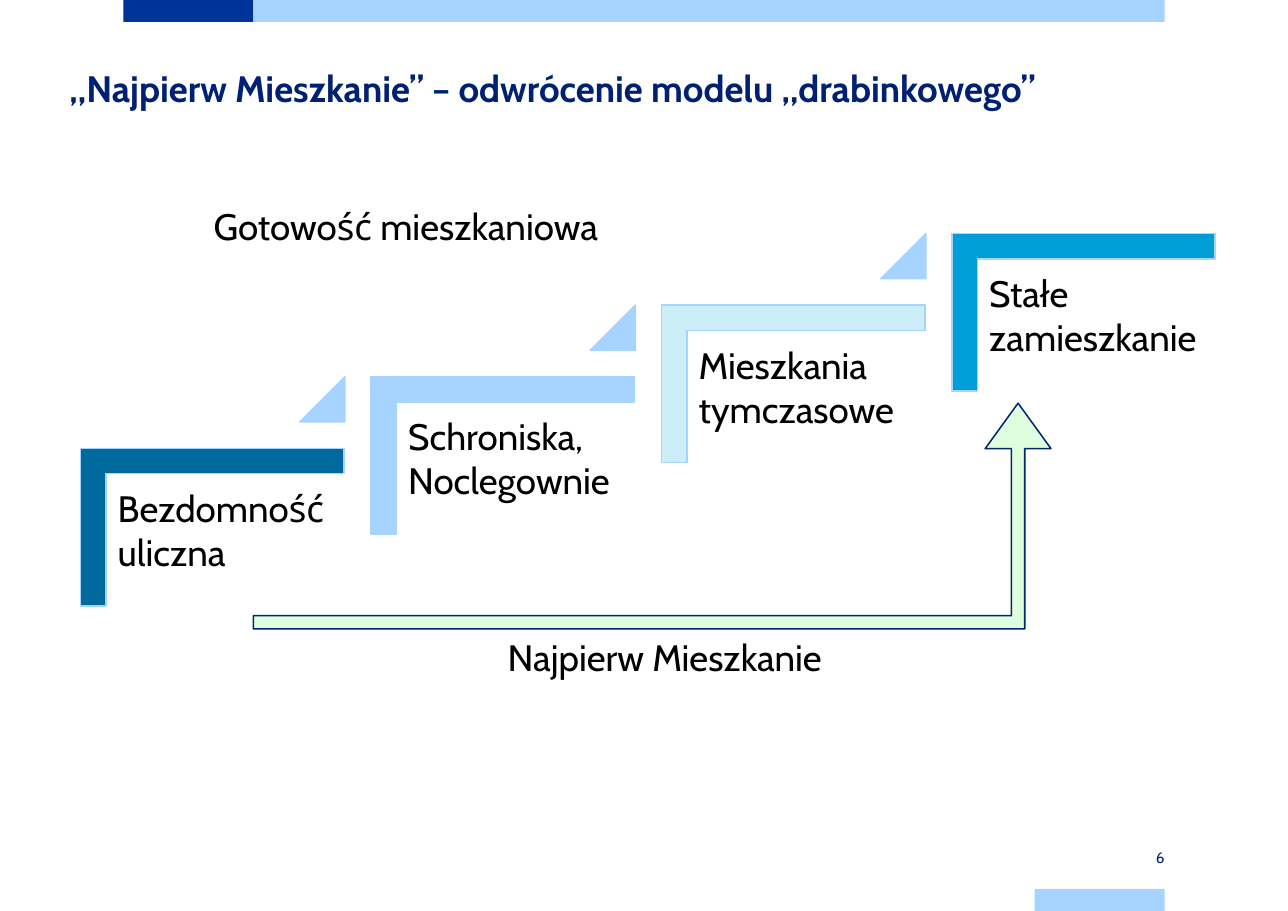
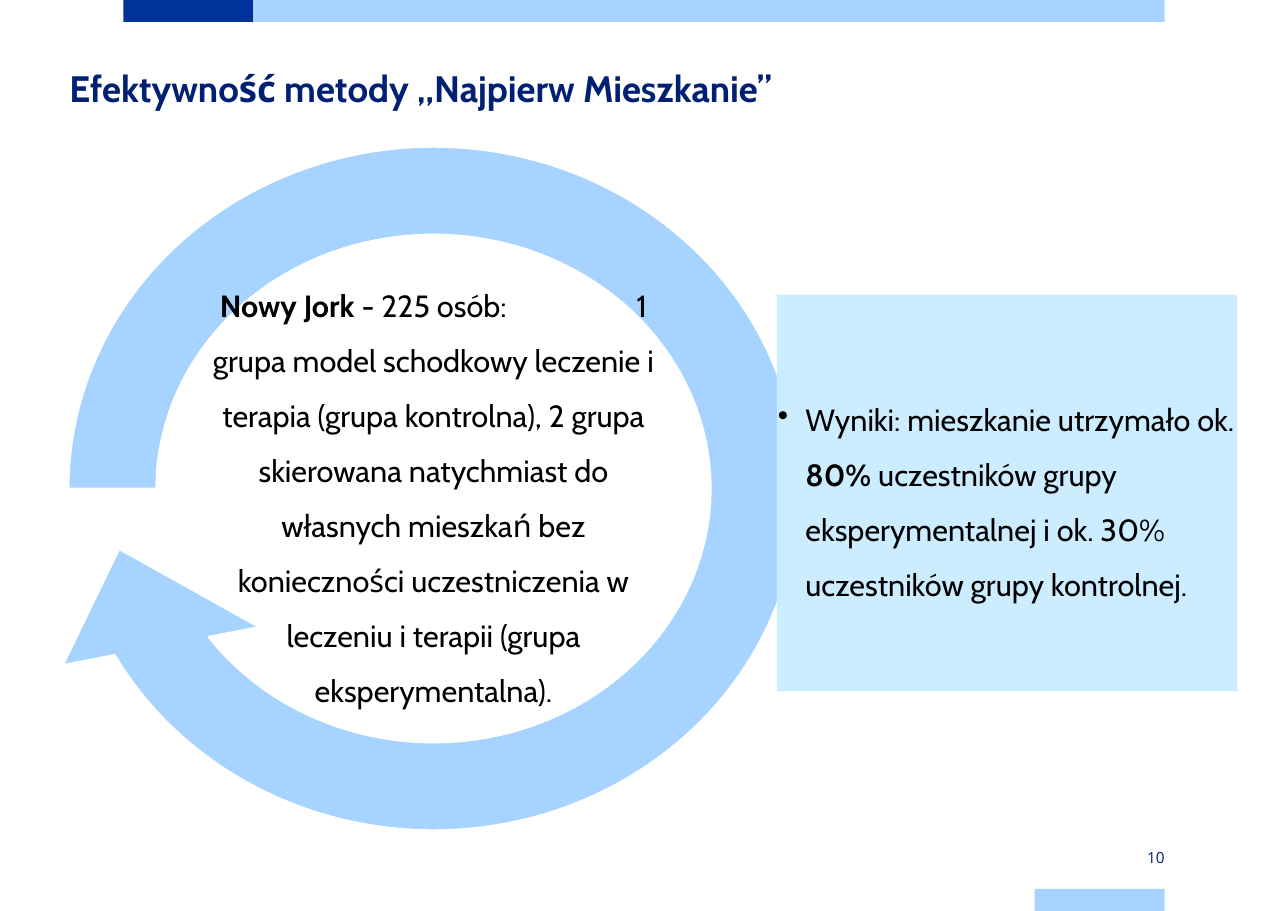
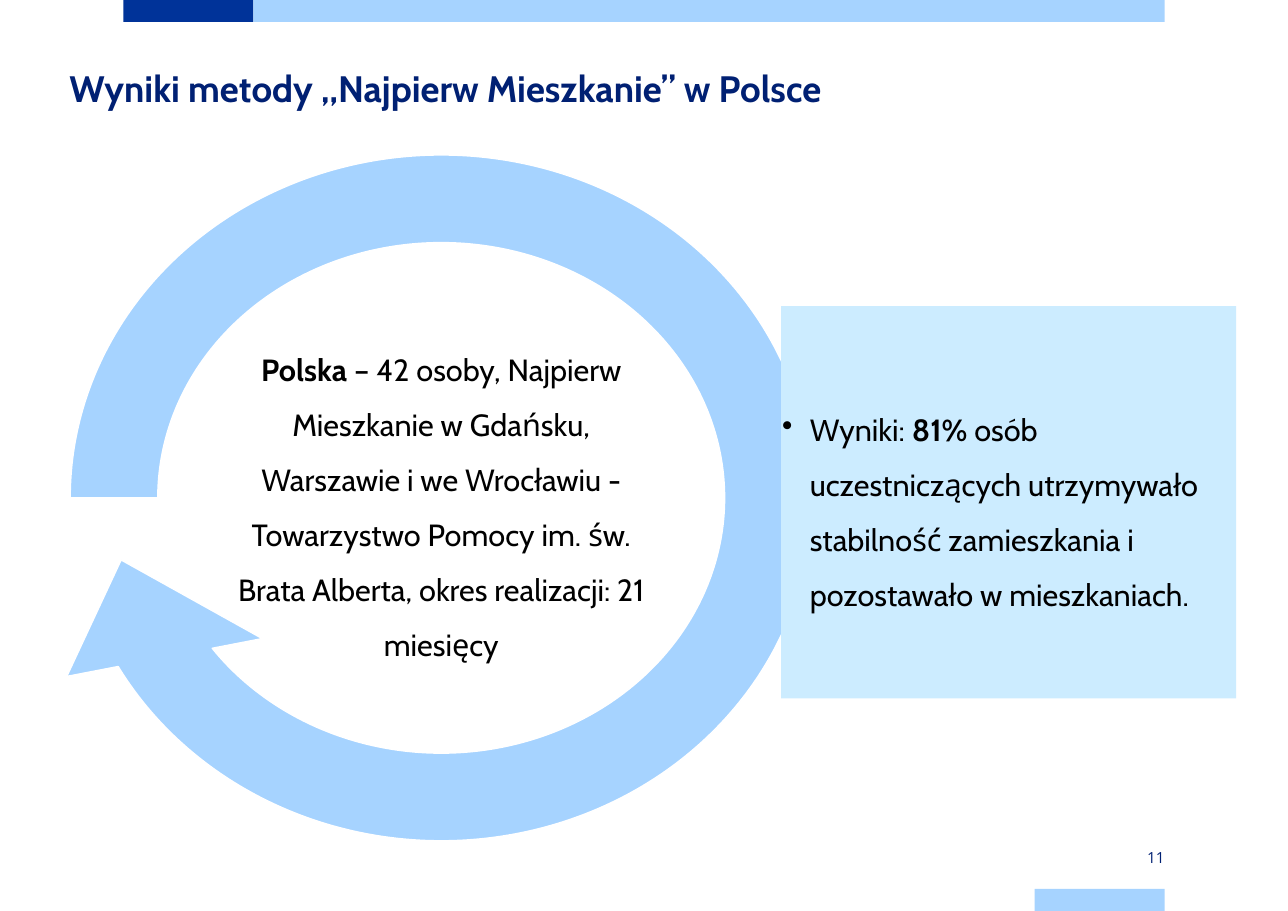
from collections import namedtuple
from dataclasses import dataclass

from lxml import etree
from pptx import Presentation
from pptx.dml.color import RGBColor
from pptx.enum.shapes import MSO_SHAPE
from pptx.enum.text import MSO_ANCHOR, PP_ALIGN
from pptx.oxml.ns import qn
from pptx.util import Inches, Pt

RECTANGLE = MSO_SHAPE.RECTANGLE
CORNER = MSO_SHAPE.CORNER
TRIANGLE = MSO_SHAPE.ISOSCELES_TRIANGLE
BENT_ARROW = MSO_SHAPE.BENT_UP_ARROW
RING_ARROW = MSO_SHAPE.CIRCULAR_ARROW
TOP, MIDDLE = MSO_ANCHOR.TOP, MSO_ANCHOR.MIDDLE
LEFT, CENTER, RIGHT = PP_ALIGN.LEFT, PP_ALIGN.CENTER, PP_ALIGN.RIGHT


@dataclass(frozen=True)
class Theme:
    navy: str = "002073"
    royal: str = "003399"
    sky: str = "A6D3FF"
    panel: str = "CCECFF"
    white: str = "FFFFFF"
    black: str = "000000"
    step_fills: tuple = ("00699E", "A6D3FF", "CBEEF9", "009ED6")
    shortcut_fill: str = "DEFEDE"
    shortcut_line: str = "002671"
    font: str = "Cabin"
    number_font: str = "Open Sans"
    title_size: int = 24
    label_size: int = 24
    body_size: int = 20
    number_size: int = 10


THEME = Theme()
Box = namedtuple("Box", "left top width height")
Run = namedtuple("Run", "text bold", defaults=(False,))


# Basic parts
def add_shape(slide, kind, box, fill, line=None, adjustments=()):
    shape = slide.shapes.add_shape(kind, *map(Inches, box))
    shape.shadow.inherit = False
    shape.fill.solid()
    shape.fill.fore_color.rgb = RGBColor.from_string(fill)
    if line:
        shape.line.color.rgb = RGBColor.from_string(line)
        shape.line.width = Pt(1)
    else:
        shape.line.fill.background()
    for index, value in enumerate(adjustments):
        shape.adjustments[index] = value
    return shape


def set_bullet(paragraph, indent):
    properties = paragraph._p.get_or_add_pPr()
    properties.set("marL", str(Inches(indent)))
    properties.set("indent", str(-Inches(indent)))
    etree.SubElement(properties, qn("a:buChar")).set("char", "•")


def set_tab(paragraph, position):
    tabs = etree.SubElement(paragraph._p.get_or_add_pPr(), qn("a:tabLst"))
    tab = etree.SubElement(tabs, qn("a:tab"))
    tab.set("pos", str(Inches(position)))
    tab.set("algn", "l")


def write(shape, runs, size, color=THEME.black, font=THEME.font, align=LEFT,
          anchor=TOP, inset=(0.1, 0.05), spacing=None, bullet=None, tab=None):
    frame = shape.text_frame
    frame.word_wrap = True
    frame.vertical_anchor = anchor
    frame.margin_left = frame.margin_right = Inches(inset[0])
    frame.margin_top = frame.margin_bottom = Inches(inset[1])
    paragraph = frame.paragraphs[0]
    if bullet:
        set_bullet(paragraph, bullet)
    if tab:
        set_tab(paragraph, tab)
    paragraph.alignment = align
    paragraph.line_spacing = spacing
    for part in runs:
        run = paragraph.add_run()
        run.text = part.text
        run.font.name = font
        run.font.size = Pt(size)
        run.font.bold = part.bold
        run.font.color.rgb = RGBColor.from_string(color)


def add_text(slide, box, runs, size, **style):
    write(slide.shapes.add_textbox(*map(Inches, box)), runs, size, **style)


# Shared frame: bands, title and slide number
def add_frame(deck, title, number, number_font=THEME.number_font):
    slide = deck.slides.add_slide(deck.slide_layouts[6])
    add_shape(slide, RECTANGLE, Box(1.12, 0, 1.18, 0.2), THEME.royal)
    add_shape(slide, RECTANGLE, Box(2.3, 0, 8.27, 0.2), THEME.sky)
    add_shape(slide, RECTANGLE, Box(9.39, 8.07, 1.18, 0.2), THEME.sky)
    add_text(slide, Box(0.63, 0.5, 10.73, 0.72), [Run(title, True)], THEME.title_size,
             color=THEME.navy, inset=(0, 0), spacing=Pt(36))
    add_text(slide, Box(9.39, 7.68, 1.18, 0.2), [Run(number)], THEME.number_size,
             color=THEME.navy, font=number_font, align=RIGHT, anchor=MIDDLE,
             inset=(0, 0.08))
    return slide


# One stair: an angle bracket with its label
def add_step(slide, box, label, fill):
    # The corner is drawn upright, then turned about its centre
    turned = Box(box.left + (box.width - box.height) / 2,
                 box.top + (box.height - box.width) / 2, box.height, box.width)
    add_shape(slide, CORNER, turned, fill, THEME.sky, (0.161, 0.161)).rotation = 90
    add_text(slide, Box(box.left + 0.24, box.top + 0.24, 2.15, 1.89), [Run(label)],
             THEME.label_size, inset=(0.1, 0.1))


# Staircase rising from the lower left of its box
def add_staircase(slide, box, labels):
    width, height, rise, marker = 2.39, 1.43, 0.65, 0.41
    pitch = (box.width - width) / (len(labels) - 1)
    for index, (label, fill) in enumerate(zip(labels, THEME.step_fills)):
        step = Box(box.left + index * pitch,
                   box.top + box.height - height - index * rise, width, height)
        add_step(slide, step, label, fill)
        if index < len(labels) - 1:
            add_shape(slide, TRIANGLE,
                      Box(step.left + 1.99, step.top - rise, marker, marker),
                      THEME.sky, THEME.sky, (1,))


# Shortcut arrow with its caption below
def add_shortcut(slide, box, caption):
    add_shape(slide, BENT_ARROW, box, THEME.shortcut_fill, THEME.shortcut_line,
              (0.059, 0.146, 0.202))
    add_text(slide, Box(box.left + 2.21, box.top + box.height, 3.86, 0.5),
             [Run(caption)], THEME.label_size)


# Study: ring arrow around the sample, results panel on its right
def add_study(slide, box, ring_width, panel_size, sample_size, sample, results, tab=None):
    middle = box.top + box.height / 2
    panel_width, panel_height = panel_size
    sample_width, sample_height = sample_size
    add_shape(slide, RING_ARROW, Box(box.left, box.top, ring_width, box.height),
              THEME.sky, THEME.white, (0.11, 11.423, 90, 108, 0.125))
    panel = add_shape(slide, RECTANGLE,
                      Box(box.left + box.width - panel_width,
                          middle + 0.04 - panel_height / 2, panel_width, panel_height),
                      THEME.panel)
    body = dict(size=THEME.body_size, anchor=MIDDLE, inset=(0.01, 0.01), spacing=1.5)
    write(panel, results, bullet=0.25, **body)
    add_text(slide, Box(box.left + (ring_width - sample_width) / 2,
                        middle - sample_height / 2, sample_width, sample_height),
             sample, align=CENTER, tab=tab, **body)


def build_ladder(deck):
    slide = add_frame(deck, "„Najpierw Mieszkanie” – odwrócenie modelu „drabinkowego”",
                      "6", THEME.font)
    add_text(slide, Box(1.84, 1.8, 3.86, 0.5), [Run("Gotowość mieszkaniowa")],
             THEME.label_size)
    add_staircase(slide, Box(0.73, 2.12, 10.3, 3.38),
                  ["Bezdomność uliczna", "Schroniska, Noclegownie",
                   "Mieszkania tymczasowe", "Stałe zamieszkanie"])
    add_shortcut(slide, Box(2.3, 3.66, 7.24, 2.05), "Najpierw Mieszkanie")


def build_effectiveness(deck):
    slide = add_frame(deck, "Efektywność metody „Najpierw Mieszkanie”", "10")
    sample = [Run("Nowy Jork ", True),
              Run("- 225 osób:\t1 grupa model schodkowy leczenie i terapia "
                  "(grupa kontrolna), 2 grupa skierowana natychmiast do własnych "
                  "mieszkań bez konieczności uczestniczenia w leczeniu i terapii "
                  "(grupa eksperymentalna).")]
    results = [Run("Wyniki: mieszkanie utrzymało ok. "), Run("80%", True),
               Run(" uczestników grupy eksperymentalnej i ok. 30% uczestników "
                   "grupy kontrolnej.")]
    add_study(slide, Box(0.12, 0.83, 11.11, 7.21), 7.63, (4.18, 3.6), (4.33, 4.38),
              sample, results, tab=3.78)


def build_polish_results(deck):
    slide = add_frame(deck, "Wyniki metody „Najpierw Mieszkanie” w Polsce", "11")
    sample = [Run("Polska", True),
              Run(" – 42 osoby, Najpierw Mieszkanie w Gdańsku, Warszawie i we "
                  "Wrocławiu - Towarzystwo Pomocy im. św. Brata Alberta, okres "
                  "realizacji: 21 miesięcy")]
    results = [Run("Wyniki: "), Run("81% ", True),
               Run("osób uczestniczących utrzymywało stabilność zamieszkania "
                   "i pozostawało w mieszkaniach.")]
    add_study(slide, Box(0.13, 0.9, 11.09, 7.24), 7.75, (4.13, 3.56), (3.99, 3.67),
              sample, results)


def main():
    deck = Presentation()
    deck.slide_width, deck.slide_height = Inches(11.69), Inches(8.27)
    build_ladder(deck)
    build_effectiveness(deck)
    build_polish_results(deck)
    deck.save("out.pptx")


if __name__ == "__main__":
    main()
